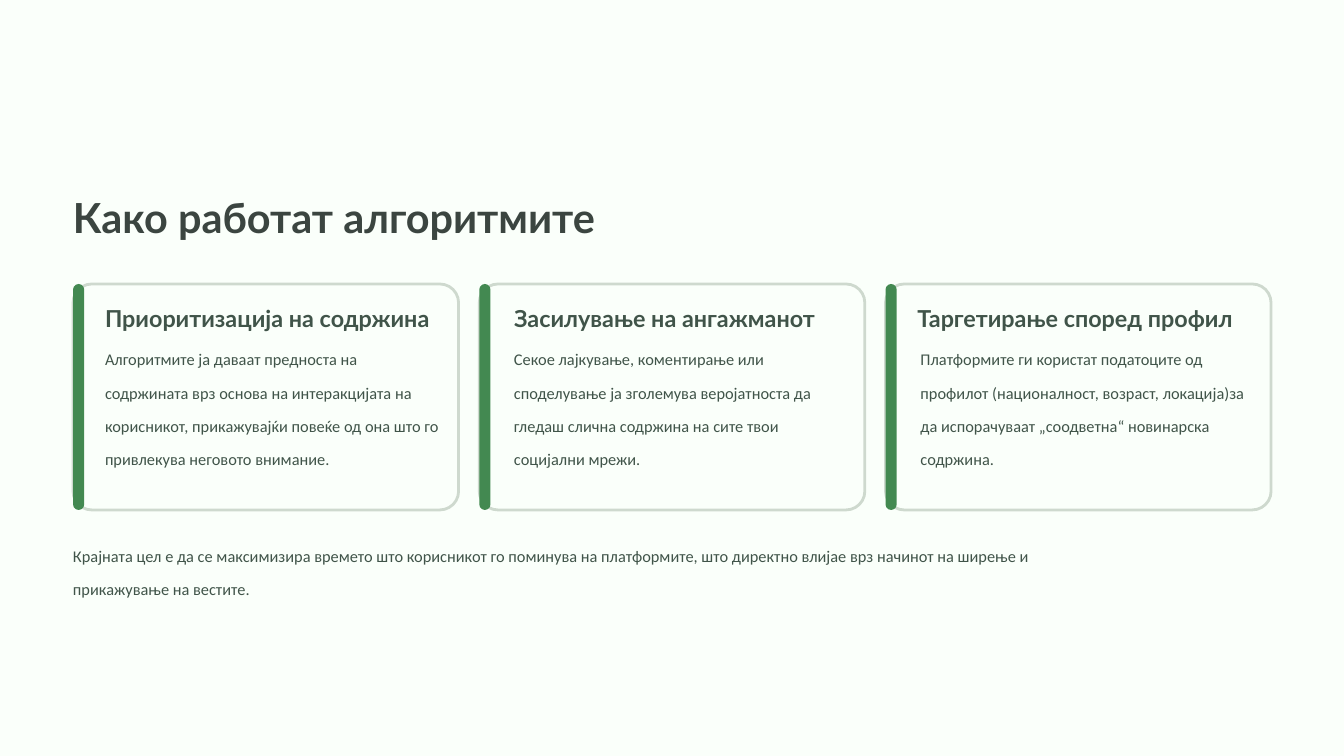
from dataclasses import dataclass

from pptx import Presentation
from pptx.dml.color import RGBColor
from pptx.enum.shapes import MSO_SHAPE
from pptx.enum.text import MSO_ANCHOR, MSO_AUTO_SIZE
from pptx.slide import Slide
from pptx.util import Pt

ROUNDED = MSO_SHAPE.ROUNDED_RECTANGLE
TOP = MSO_ANCHOR.TOP
NO_AUTOFIT = MSO_AUTO_SIZE.NONE

BACKGROUND = "FAFFFA"
BORDER = "CED9CE"
GREEN = "438951"
TITLE_COLOR = "3B4540"
TEXT_COLOR = "405449"

LEFT = 62.6
CARD_TOP = 243.4
CARD_WIDTH = 330.5
CARD_HEIGHT = 193.7
CARD_STEP = 348.2
BAR_WIDTH = 9.6
HEADING_TOP = 257
BODY_TOP = 288


@dataclass(frozen=True)
class TextStyle:
    font: str
    size: float
    line_spacing: float
    color: str
    bold: bool = False


@dataclass(frozen=True)
class Card:
    heading: str
    body: str
    heading_indent: float
    body_indent: float
    body_width: float


TITLE = TextStyle("Lato", 35.5, 44.5, TITLE_COLOR, True)
HEADING = TextStyle("Lato", 20, 27.5, TEXT_COLOR, True)
BODY = TextStyle("Calibri", 14, 28.5, TEXT_COLOR)

CARDS = [
    Card(
        "Приоритизација на содржина",
        "Алгоритмите ја даваат предноста на содржината врз основа на интеракцијата "
        "на корисникот, прикажувајќи повеќе од она што го привлекува неговото внимание.",
        27.4, 27.4, 289.4,
    ),
    Card(
        "Засилување на ангажманот",
        "Секое лајкување, коментирање или споделување ја зголемува веројатноста "
        "да гледаш слична содржина на сите твои социјални мрежи.",
        29.8, 29.8, 290.9,
    ),
    Card(
        "Таргетирање според профил",
        "Платформите ги користат податоците од профилот (националност, возраст, "
        "локација)за да испорачуваат „соодветна“ новинарска содржина.",
        27.4, 30, 280.1,
    ),
]

CONCLUSION = [
    "Крајната цел е да се максимизира времето што корисникот го поминува на "
    "платформите, што директно влијае врз начинот на ширење и",
    "прикажување на вестите.",
]


def rgb(value: str) -> RGBColor:
    return RGBColor.from_string(value)


def add_text(slide: Slide, left: float, top: float, width: float, height: float,
             lines: list[str], style: TextStyle) -> None:
    box = slide.shapes.add_textbox(Pt(left), Pt(top), Pt(width), Pt(height))
    frame = box.text_frame
    frame.word_wrap = True
    frame.auto_size = NO_AUTOFIT
    frame.vertical_anchor = TOP
    frame.margin_left = frame.margin_right = Pt(0)
    frame.margin_top = frame.margin_bottom = Pt(0)
    for index, line in enumerate(lines):
        paragraph = frame.add_paragraph() if index else frame.paragraphs[0]
        paragraph.line_spacing = Pt(style.line_spacing)
        run = paragraph.add_run()
        run.text = line
        run.font.name = style.font
        run.font.size = Pt(style.size)
        run.font.bold = style.bold
        run.font.color.rgb = rgb(style.color)


def add_panel(slide: Slide, left: float, width: float, rounding: float,
              fill: str, border: str | None = None) -> None:
    shape = slide.shapes.add_shape(ROUNDED, Pt(left), Pt(CARD_TOP), Pt(width), Pt(CARD_HEIGHT))
    shape.adjustments[0] = rounding
    shape.shadow.inherit = False
    shape.fill.solid()
    shape.fill.fore_color.rgb = rgb(fill)
    if border:
        shape.line.color.rgb = rgb(border)
        shape.line.width = Pt(2.4)
    else:
        shape.line.fill.background()


def add_card(slide: Slide, left: float, card: Card) -> None:
    add_panel(slide, left, CARD_WIDTH, 0.083, BACKGROUND, BORDER)
    add_panel(slide, left, BAR_WIDTH, 0.5, GREEN)
    add_text(slide, left + card.heading_indent, HEADING_TOP, 290, 28, [card.heading], HEADING)
    add_text(slide, left + card.body_indent, BODY_TOP, card.body_width, 114, [card.body], BODY)


def main() -> None:
    presentation = Presentation()
    presentation.slide_width = Pt(1152)
    presentation.slide_height = Pt(648)
    slide = presentation.slides.add_slide(presentation.slide_layouts[6])
    slide.background.fill.solid()
    slide.background.fill.fore_color.rgb = rgb(BACKGROUND)

    # Title
    add_text(slide, LEFT, 162.7, 460, 44.6, ["Како работат алгоритмите"], TITLE)

    # Three cards
    for index, card in enumerate(CARDS):
        add_card(slide, LEFT + index * CARD_STEP, card)

    # Conclusion
    add_text(slide, LEFT, 456.5, 1026.7, 57, CONCLUSION, BODY)

    presentation.save("out.pptx")


if __name__ == "__main__":
    main()
